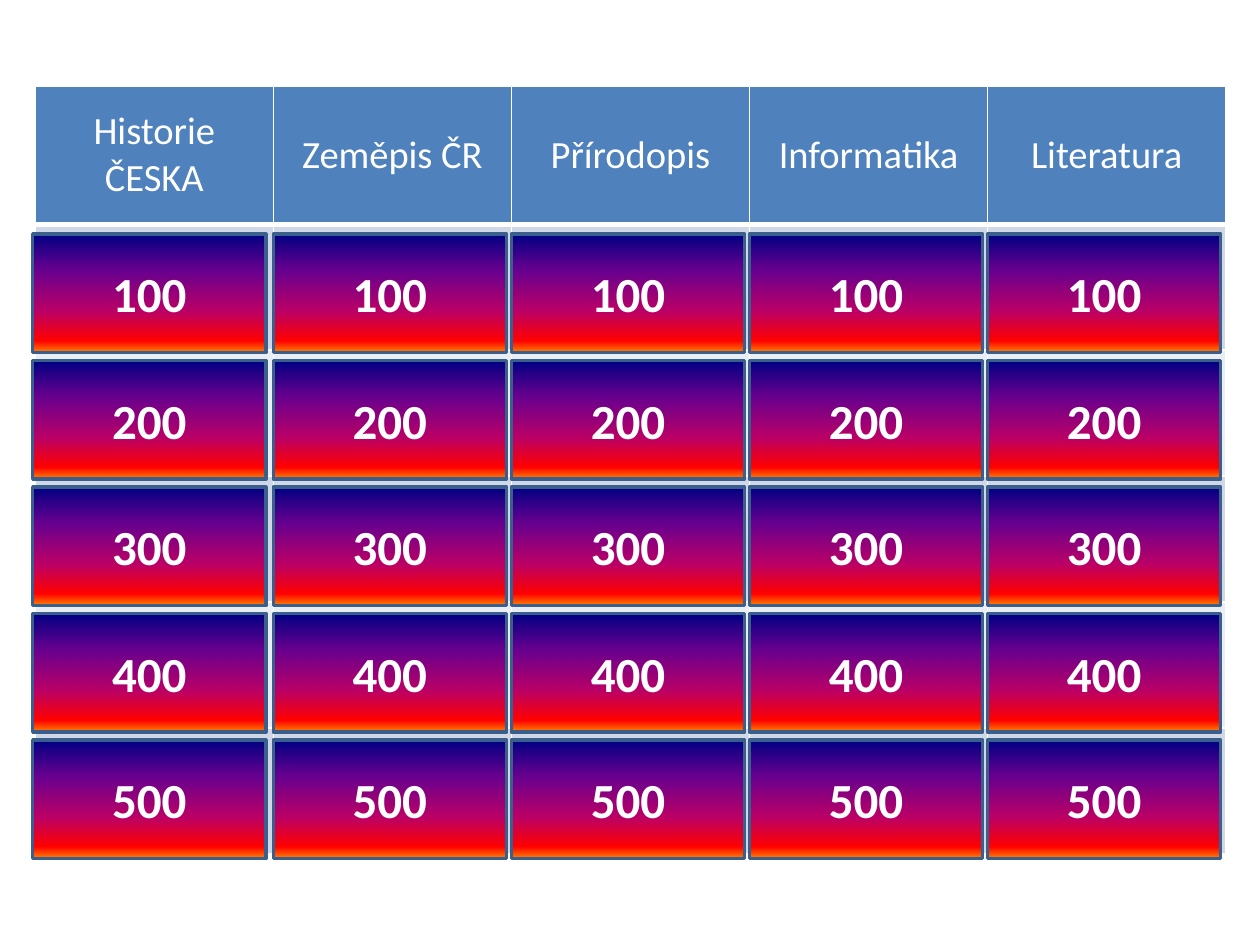
from lxml.etree import SubElement as Sub
from pptx import Presentation
from pptx.dml.color import RGBColor
from pptx.enum.shapes import MSO_SHAPE as Kind
from pptx.enum.text import MSO_ANCHOR as Anchor, PP_ALIGN as Align
from pptx.oxml.ns import qn
from pptx.util import Cm, Pt

TOPICS = ["Historie ČESKA", "Zeměpis ČR", "Přírodopis", "Informatika", "Literatura"]
POINTS = [100, 200, 300, 400, 500]
BLEND = [(0, "000082"), (30, "66008F"), (65, "BA0066"), (90, "FF0000"), (100, "FF8200")]
BANDS = ["D0D8E8", "E9EDF4"]
LEFT, TOP = 0.71, 1.73
COL, HEAD, ROW = 4.8, 2.79, 2.54
TILE_TOP, STEP = 4.72, 2.55
TILE_W, TILE_H = 4.7, 2.39
NUDGE = 0.05  # the first column of tiles starts a little further left


def paint(color, value):
    color.rgb = RGBColor.from_string(value)


def write(frame, text, size, bold=False, color="FFFFFF", font="Calibri"):
    para = frame.paragraphs[0]
    para.alignment = Align.CENTER
    run = para.add_run()
    run.text = text
    run.font.name = font
    run.font.size = Pt(size)
    run.font.bold = bold
    paint(run.font.color, color)


def border(cell, base=1):
    """Draw white cell borders; base is the width of the lower one."""
    props = cell._tc.get_or_add_tcPr()
    for side, width in (("L", 1), ("R", 1), ("T", 1), ("B", base)):
        line = Sub(props, qn(f"a:ln{side}"), w=str(Pt(width)))
        Sub(Sub(line, qn("a:solidFill")), qn("a:srgbClr"), val="FFFFFF")


def fill_cell(cell, color):
    cell.fill.solid()
    paint(cell.fill.fore_color, color)


def add_board(slide):
    rows, cols = len(POINTS) + 1, len(TOPICS)
    table = slide.shapes.add_table(
        rows, cols, Cm(LEFT), Cm(TOP), Cm(cols * COL), Cm(HEAD + len(POINTS) * ROW)
    ).table
    for col in table.columns:
        col.width = Cm(COL)
    for i, row in enumerate(table.rows):
        row.height = Cm(ROW if i else HEAD)
        for cell in row.cells:
            border(cell, 1 if i else 3)
            fill_cell(cell, BANDS[(i - 1) % 2] if i else "4F81BD")
    for cell, topic in zip(table.rows[0].cells, TOPICS):
        cell.vertical_anchor = Anchor.MIDDLE
        write(cell.text_frame, topic, size=22)


def shade(shape):
    """Fill with the blend from top to bottom."""
    shape.fill.gradient()
    shape.fill.gradient_angle = 270
    stops = shape._element.spPr.find(qn("a:gradFill")).find(qn("a:gsLst"))
    for old in list(stops):
        stops.remove(old)
    for place, color in BLEND:
        stop = Sub(stops, qn("a:gs"), pos=str(place * 1000))
        Sub(stop, qn("a:srgbClr"), val=color)


def add_tile(slide, left, top, text):
    tile = slide.shapes.add_shape(
        Kind.RECTANGLE, Cm(left), Cm(top), Cm(TILE_W), Cm(TILE_H)
    )
    tile.shadow.inherit = False
    shade(tile)
    paint(tile.line.color, "3A5F8C")
    tile.line.width = Pt(2)
    tile.text_frame.vertical_anchor = Anchor.MIDDLE
    write(tile.text_frame, text, size=28, bold=True)


def main():
    deck = Presentation()
    deck.slide_width, deck.slide_height = Cm(25.4), Cm(19.05)
    slide = deck.slides.add_slide(deck.slide_layouts[6])
    add_board(slide)
    for c in range(len(TOPICS)):
        left = LEFT + c * COL if c else LEFT - NUDGE
        for r, points in enumerate(POINTS):
            add_tile(slide, left, TILE_TOP + r * STEP, str(points))
    deck.save("out.pptx")


if __name__ == "__main__":
    main()
